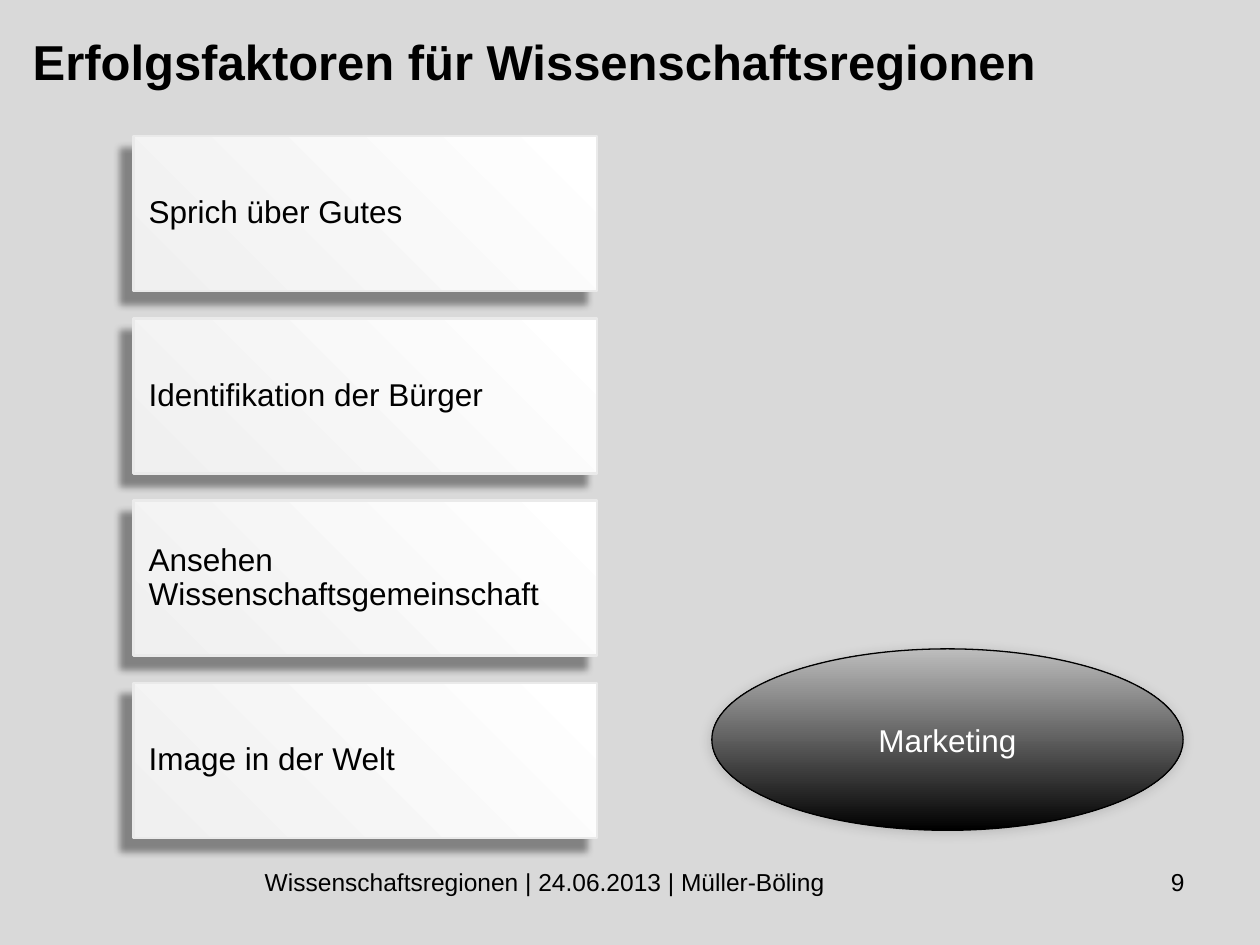
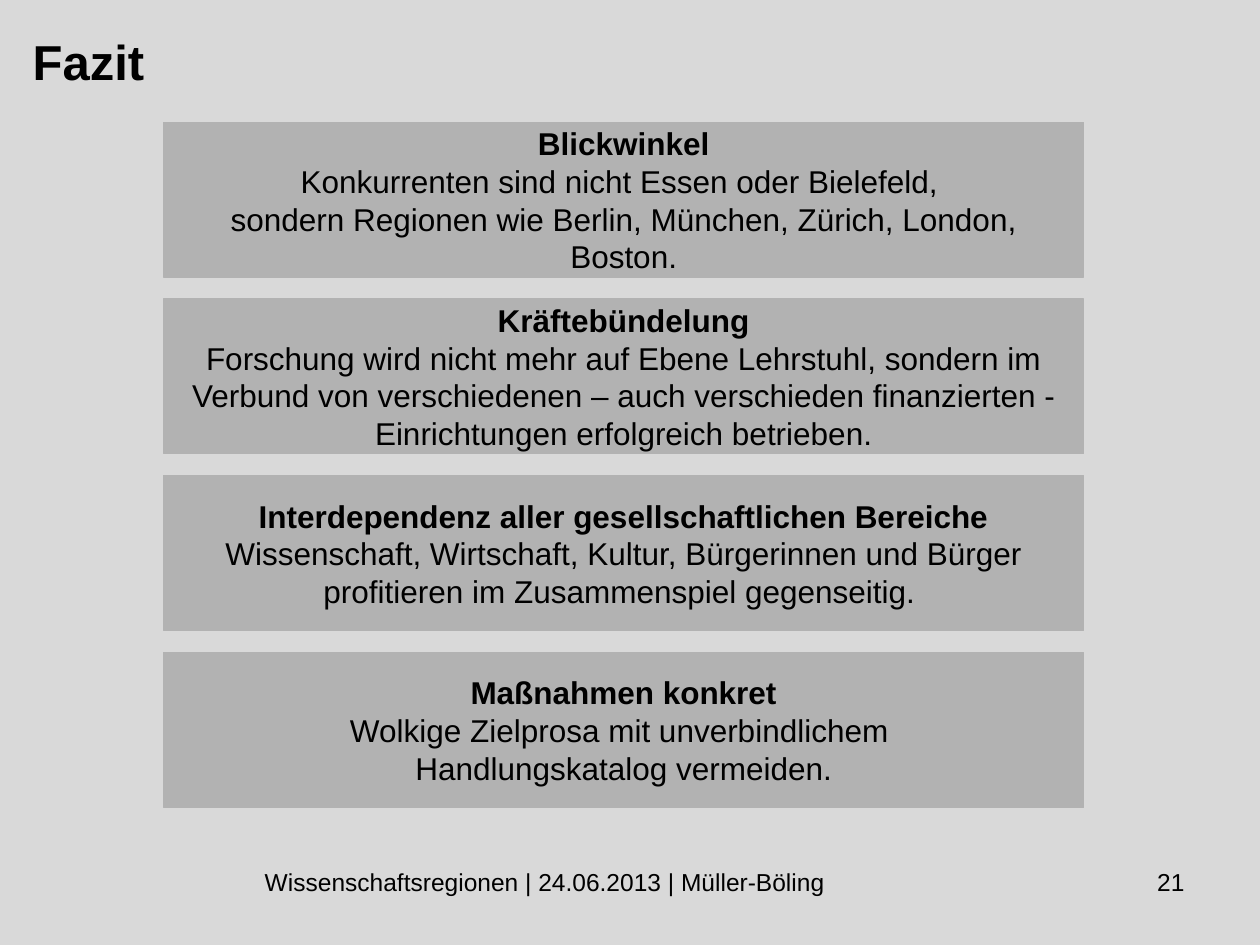
from lxml.etree import SubElement
from pptx import Presentation
from pptx.dml.color import RGBColor
from pptx.enum.shapes import MSO_SHAPE
from pptx.enum.text import MSO_ANCHOR, MSO_AUTO_SIZE, PP_ALIGN
from pptx.oxml.ns import qn
from pptx.util import Inches, Pt

COLS, ROWS = 100, 75
FOOTER = "Wissenschaftsregionen | 24.06.2013 | Müller-Böling"
GOALS = [
    "Sprich über Gutes",
    "Identifikation der Bürger",
    "Ansehen Wissenschaftsgemeinschaft",
    "Image in der Welt",
]
THESES = [
    ["Blickwinkel",
     "Konkurrenten sind nicht Essen oder Bielefeld, ",
     "sondern Regionen wie Berlin, München, Zürich, London, Boston."],
    ["Kräftebündelung",
     "Forschung wird nicht mehr auf Ebene Lehrstuhl, sondern im Verbund von "
     "verschiedenen – auch verschieden finanzierten - Einrichtungen erfolgreich betrieben."],
    ["Interdependenz aller gesellschaftlichen Bereiche",
     "Wissenschaft, Wirtschaft, Kultur, Bürgerinnen und Bürger profitieren "
     "im Zusammenspiel gegenseitig. "],
    ["Maßnahmen konkret",
     "Wolkige Zielprosa mit unverbindlichem ",
     "Handlungskatalog vermeiden."],
]


def tint(code):
    return RGBColor.from_string(code)


def write(frame, *lines, size=18, color="000000", bold=False, head=False,
          align=PP_ALIGN.LEFT, anchor=MSO_ANCHOR.TOP, space=1.0,
          inset=(0.1, 0.05, 0.1, 0.05)):
    frame.word_wrap = True
    frame.auto_size = MSO_AUTO_SIZE.NONE
    frame.vertical_anchor = anchor
    (frame.margin_left, frame.margin_top,
     frame.margin_right, frame.margin_bottom) = map(Inches, inset)
    for num, line in enumerate(lines):
        para = frame.add_paragraph() if num else frame.paragraphs[0]
        para.alignment = align
        para.line_spacing = space
        run = para.add_run()
        run.text = line
        font = run.font
        font.name, font.size = "Arial", Pt(size)
        font.bold = bold or (head and num == 0)
        font.color.rgb = tint(color)


class Deck:
    def __init__(self):
        self.show = Presentation()
        self.show.slide_width, self.show.slide_height = Inches(10), Inches(7.5)
        back = self.show.slide_master.background.fill
        back.solid()
        back.fore_color.rgb = tint("D9D9D9")
        self.slide = None

    def place(self, col, row, wide, high):
        dx, dy = self.show.slide_width / COLS, self.show.slide_height / ROWS
        return [round(n) for n in (col * dx, row * dy, wide * dx, high * dy)]

    def page(self, title, number):
        self.slide = self.show.slides.add_slide(self.show.slide_layouts[5])
        head = self.slide.shapes.title
        head.left, head.top, head.width, head.height = self.place(1.6, 1.6, 96.2, 7)
        write(head.text_frame, title, size=28, bold=True, inset=(0.1, 0.09, 0.1, 0.05))
        self.label(FOOTER, 14.8, 68.3, 56.9, 5.2, size=14, align=PP_ALIGN.CENTER)
        self.label(str(number), 71.7, 68.3, 23.3, 5.2, size=14, align=PP_ALIGN.RIGHT)

    def label(self, text, *spot, **style):
        box = self.slide.shapes.add_textbox(*self.place(*spot))
        write(box.text_frame, text, **style)

    def shape(self, kind, lines, spot, fill, edge, width=0.75, angle=0,
              shade=None, **style):
        item = self.slide.shapes.add_shape(kind, *self.place(*spot))
        item.shadow.inherit = False
        if len(fill) == 1:
            item.fill.solid()
            item.fill.fore_color.rgb = tint(fill[0])
        else:
            item.fill.gradient()
            item.fill.gradient_angle = angle
            for stop, code in zip(item.fill.gradient_stops, fill):
                stop.color.rgb = tint(code)
        item.line.color.rgb = tint(edge)
        item.line.width = Pt(width)
        if shade:
            self.shade(item, *shade)
        write(item.text_frame, *lines, anchor=MSO_ANCHOR.MIDDLE, **style)

    def shade(self, item, alpha, blur, dist):
        group = item._element.spPr.find(qn("a:effectLst"))
        outer = SubElement(group, qn("a:outerShdw"), blurRad=str(Pt(blur)),
                           dist=str(Pt(dist)), dir=str(135 * 60000),
                           algn="tr", rotWithShape="0")
        color = SubElement(outer, qn("a:srgbClr"), val="000000")
        SubElement(color, qn("a:alpha"), val=str(alpha * 1000))

    def card(self, text, row):
        self.shape(MSO_SHAPE.RECTANGLE, [text], (10.6, row, 36.8, 12.3),
                   ["F0F0F0", "FFFFFF"], "EAEAEA", width=1.5, angle=45,
                   shade=(40, 4, 10), space=0.9, inset=(0.12, 0.04, 0.04, 0.04))

    def oval(self, text, *spot):
        self.shape(MSO_SHAPE.OVAL, [text], spot, ["000000", "BDBDBD"], "000000",
                   angle=90, shade=(15, 7, 1), color="FFFFFF", align=PP_ALIGN.CENTER)

    def panel(self, lines, row):
        self.shape(MSO_SHAPE.RECTANGLE, lines, (13, row, 73, 12.3),
                   ["B2B2B2"], "B2B2B2", head=True, align=PP_ALIGN.CENTER)


def main():
    deck = Deck()
    deck.page("Erfolgsfaktoren für Wissenschaftsregionen", 9)
    deck.oval("Marketing", 56.5, 51.5, 37.4, 14.4)
    for num, goal in enumerate(GOALS):
        deck.card(goal, 10.8 + 14.47 * num)

    deck.page("Fazit", 21)
    for num, lines in enumerate(THESES):
        deck.panel(lines, 9.7 + 14.03 * num)
    deck.show.save("out.pptx")


if __name__ == "__main__":
    main()
